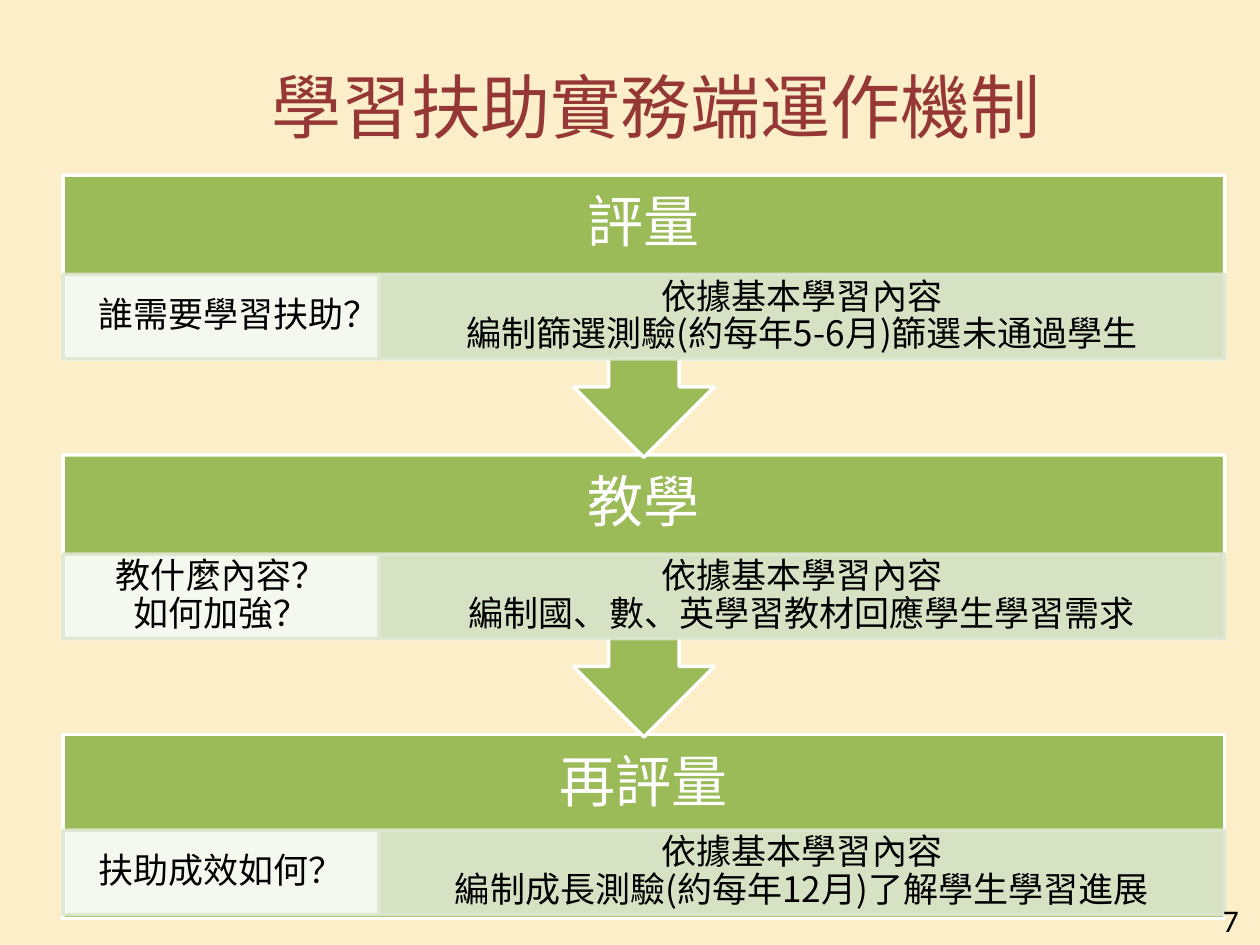
from lxml.etree import SubElement
from pptx import Presentation
from pptx.dml.color import RGBColor
from pptx.enum.text import MSO_ANCHOR as Anchor, PP_ALIGN as Align
from pptx.oxml.ns import qn
from pptx.util import Inches, Pt

# Content: heading, question, answer, share of the block above the detail row
TITLE = "學習扶助實務端運作機制"
PAGE_NUMBER = "7"
STAGES = [
    ("評量", "誰需要學習扶助？",
     "依據基本學習內容\n編制篩選測驗(約每年5-6月)篩選未通過學生", 0.54),
    ("教學", "教什麼內容？\n如何加強？",
     "依據基本學習內容\n編制國、數、英學習教材回應學生學習需求", 0.54),
    ("再評量", "扶助成效如何？",
     "依據基本學習內容\n編制成長測驗(約每年12月)了解學生學習進展", 0.52),
]

# Style
FONT = "Noto Sans CJK SC"
CREAM = RGBColor(0xFB, 0xEE, 0xC9)
MAROON = RGBColor(0x95, 0x37, 0x35)
GREEN = RGBColor(0x9B, 0xBB, 0x59)
PALE_GREEN = RGBColor(0xDE, 0xE7, 0xD1)
WHITE = RGBColor(0xFF, 0xFF, 0xFF)
BLACK = RGBColor(0, 0, 0)

# Grid, in inches
LEFT, RIGHT, TOP = 0.5, 9.72, 1.39
SPLIT = 3.01
PITCH = 2.22
BLOCK_HEIGHT, DETAIL_HEIGHT = 1.46, 0.67
ARROW_HEIGHT = 0.78
STEM_HALF, HEAD_HALF = 0.28, 0.56


def rectangle(left, top, right, bottom):
    return [(left, top), (right, top), (right, bottom), (left, bottom)]


def arrow_block(top):
    bottom = top + BLOCK_HEIGHT
    tip = bottom + ARROW_HEIGHT
    neck = tip - HEAD_HALF
    center = (LEFT + RIGHT) / 2
    return [
        (RIGHT, bottom), (center + STEM_HALF, bottom),
        (center + STEM_HALF, neck), (center + HEAD_HALF, neck),
        (center, tip),
        (center - HEAD_HALF, neck), (center - STEM_HALF, neck),
        (center - STEM_HALF, bottom), (LEFT, bottom),
        (LEFT, top), (RIGHT, top),
    ]


def write(shape, text, size, color, align=Align.CENTER, font=FONT):
    frame = shape.text_frame
    frame.word_wrap = True
    frame.vertical_anchor = Anchor.MIDDLE
    paragraph = frame.paragraphs[0]
    paragraph.text = text
    paragraph.alignment = align
    for run in paragraph.runs:
        run.font.size = Pt(size)
        run.font.name = font
        run.font.color.rgb = color
        east_asian = SubElement(run.font._element, qn("a:ea"))
        east_asian.set("typeface", font)
    return paragraph


def set_opacity(shape, percent):
    for color in shape._element.spPr.iter(qn("a:srgbClr")):
        SubElement(color, qn("a:alpha")).set("val", str(percent * 1000))


def add_panel(slide, points, fill, line, text, size, color, insets):
    corners = [(Inches(x), Inches(y)) for x, y in points]
    builder = slide.shapes.build_freeform(*corners[0])
    builder.add_line_segments(corners[1:], close=True)
    shape = builder.convert_to_shape()
    shape.shadow.inherit = False
    shape.fill.solid()
    shape.fill.fore_color.rgb = fill
    shape.line.color.rgb = line
    shape.line.width = Pt(2)
    frame = shape.text_frame
    (frame.margin_left, frame.margin_top,
     frame.margin_right, frame.margin_bottom) = map(Inches, insets)
    write(shape, text, size, color).line_spacing = 0.9
    return shape


def add_stage(slide, index, heading, question, answer, share):
    top = TOP + index * PITCH
    is_last = index == len(STAGES) - 1

    # Heading block, with an arrow to the next stage
    if is_last:
        points = rectangle(LEFT, top, RIGHT, top + BLOCK_HEIGHT)
        bottom_inset = 0.92
    else:
        points = arrow_block(top)
        bottom_inset = 1.71
    add_panel(slide, points, GREEN, WHITE, heading, 32, WHITE,
              (0.25, 0.25, 0.25, bottom_inset))

    # Question and answer cells
    detail_top = top + share * BLOCK_HEIGHT
    for left, right, fill, text in (
        (LEFT, SPLIT, WHITE, question),
        (SPLIT, RIGHT, PALE_GREEN, answer),
    ):
        points = rectangle(left, detail_top, right, detail_top + DETAIL_HEIGHT)
        cell = add_panel(slide, points, fill, PALE_GREEN, text, 20, BLACK,
                         (0.16, 0.03, 0.16, 0.03))
        set_opacity(cell, 90)


def main():
    presentation = Presentation()
    presentation.slide_width, presentation.slide_height = Inches(10), Inches(7.5)
    slide = presentation.slides.add_slide(presentation.slide_layouts[5])
    slide.background.fill.solid()
    slide.background.fill.fore_color.rgb = CREAM

    # Title
    title = slide.shapes.title
    title.left, title.top = Inches(1.54), Inches(0.21)
    title.width, title.height = Inches(7.33), Inches(1.25)
    write(title, TITLE, 40, MAROON)

    # Stages from the bottom up, so each arrow tip overlaps the next block
    for index, stage in reversed(list(enumerate(STAGES))):
        add_stage(slide, index, *stage)

    # Page number
    number = slide.shapes.add_textbox(
        Inches(7.6), Inches(7.1), Inches(2.33), Inches(0.4))
    write(number, PAGE_NUMBER, 18, BLACK, Align.RIGHT, "Calibri")

    presentation.save("out.pptx")


if __name__ == "__main__":
    main()
